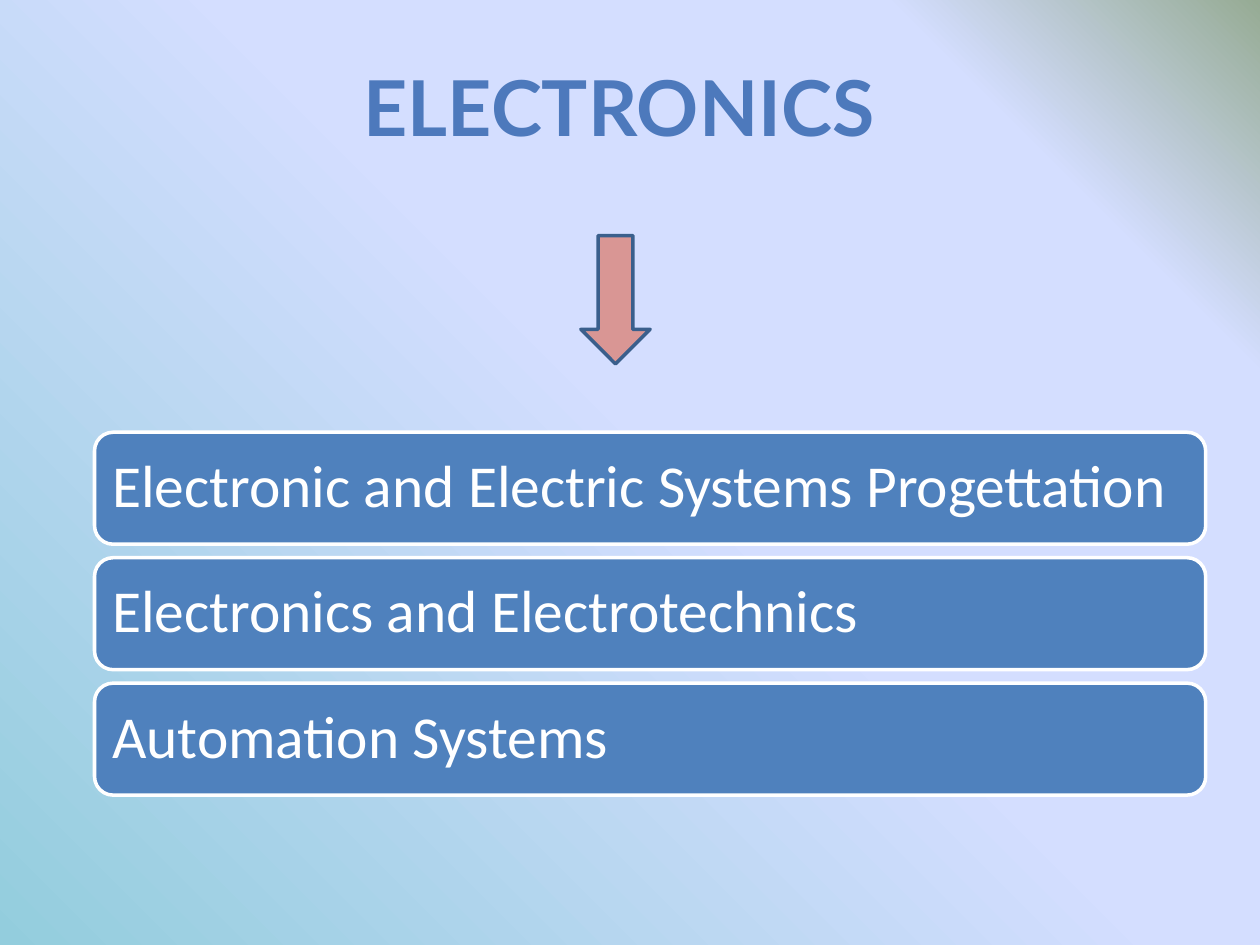
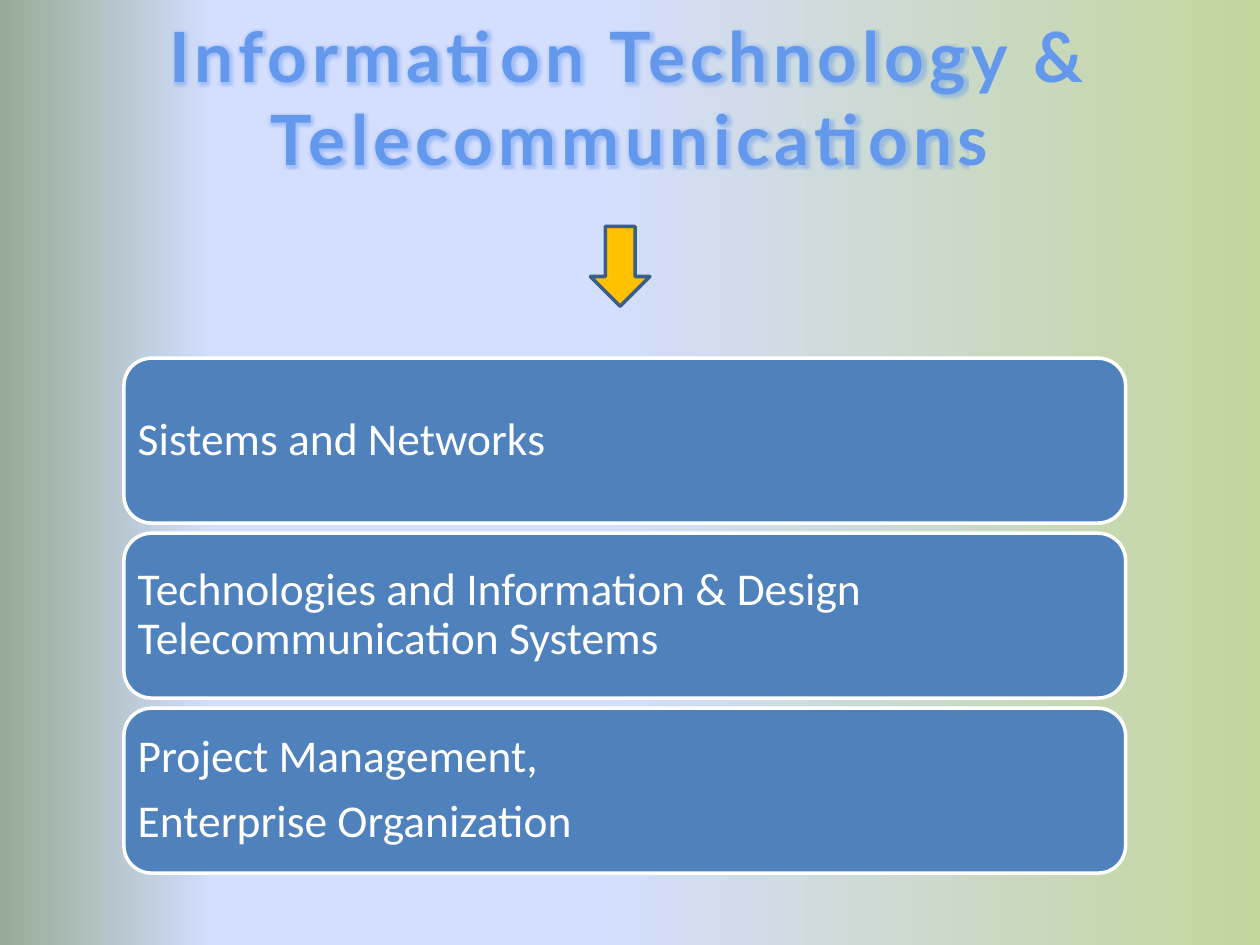
"""Build two school-course slides: a title, a down arrow and stacked subject blocks."""
import pptx
import pptx.dml.color
import pptx.enum.shapes
import pptx.enum.text
import pptx.oxml
import pptx.oxml.ns
import pptx.util

Pt = pptx.util.Pt
MSO_SHAPE = pptx.enum.shapes.MSO_SHAPE
MSO_ANCHOR = pptx.enum.text.MSO_ANCHOR
PP_ALIGN = pptx.enum.text.PP_ALIGN

COLORS = {
    "block": "4F81BD", "white": "FFFFFF", "arrow_line": "3A5F8C",
    "rose": "D99694", "amber": "FFC000",
    "title_blue": "4D79BC", "title_sky": "6398ED",
    "aqua": "93CDDD", "lime": "C3D69B", "lavender": "D4DEFF", "sage": "96AB94",
}
TITLE_FONT, BLOCK_FONT = "Lato", "Calibri"
TITLE_SIZE = (648, 90)
CORNER, CORNER_INSET = 0.16667, 0.29289

SLIDES = [
    {
        "first_stop": "aqua", "angle": 315,
        "title": {"text": "ELECTRONICS ", "at": (35.3, 15.1), "size": 44,
                  "color": "title_blue"},
        "arrow": {"box": (331.9, 134.6, 39.6, 73.4), "color": "rose"},
        "blocks": {"box": (54, 247, 635, 64), "step": 71.7, "size": 34, "pad": 10.1},
        "subjects": [
            "Electronic and Electric Systems Progettation",
            "Electronics and Electrotechnics",
            "Automation Systems",
        ],
    },
    {
        "first_stop": "lime", "angle": 180,
        "title": {"text": "Information Technology & Telecommunications",
                  "at": (36, 10.1), "size": 39.6, "color": "title_sky",
                  "spacing": 3, "glow": 4},
        "arrow": {"box": (337.4, 129.4, 34, 45.6), "color": "amber"},
        "blocks": {"box": (70.8, 204.7, 572.4, 94.2), "step": 100, "size": 26, "pad": 7.9},
        "subjects": [
            "Sistems and Networks",
            "Technologies and Information & Design Telecommunication Systems",
            "Project Management,\nEnterprise Organization",
        ],
    },
]


def rgb(name):
    return pptx.dml.color.RGBColor.from_string(COLORS[name])


def set_background(s, first_stop, angle):
    stops = [(0, first_stop), (53, "lavender"), (83, "lavender"), (100, "sage")]
    gs = "".join(f'<a:gs pos="{pos * 1000}"><a:srgbClr val="{COLORS[name]}"/></a:gs>'
                 for pos, name in stops)
    bg = pptx.oxml.parse_xml(
        f'<p:bg {pptx.oxml.ns.nsdecls("p", "a")}><p:bgPr><a:gradFill rotWithShape="1">'
        f'<a:gsLst>{gs}</a:gsLst><a:lin ang="{angle * 60000}" scaled="0"/></a:gradFill>'
        '<a:effectLst/></p:bgPr></p:bg>')
    s.element.find(pptx.oxml.ns.qn("p:cSld")).insert(0, bg)


def style_run(r, font, size, color, bold=False):
    r.font.name, r.font.size, r.font.bold = font, Pt(size), bold
    r.font.color.rgb = rgb(color)


def add_title(s, text, at, size, color, spacing=0, glow=0):
    tf = s.shapes.add_textbox(*map(Pt, at + TITLE_SIZE)).text_frame
    tf.word_wrap, tf.vertical_anchor = True, MSO_ANCHOR.MIDDLE
    p = tf.paragraphs[0]
    p.text, p.alignment = text, PP_ALIGN.CENTER
    r = p.runs[0]
    style_run(r, TITLE_FONT, size, color, bold=True)
    rpr = r.font.fill._xPr
    if spacing:
        rpr.set("spc", str(spacing * 100))
    if glow:
        rpr.insert(1, pptx.oxml.parse_xml(
            f'<a:effectLst {pptx.oxml.ns.nsdecls("a")}><a:glow rad="{Pt(glow)}">'
            f'<a:srgbClr val="{COLORS[color]}"><a:alpha val="45000"/></a:srgbClr>'
            '</a:glow></a:effectLst>'))


def add_shape(s, kind, box, fill, line):
    sp = s.shapes.add_shape(kind, *map(Pt, box))
    sp.shadow.inherit = False
    sp.fill.solid()
    sp.fill.fore_color.rgb = rgb(fill)
    sp.line.color.rgb = rgb(line)
    sp.line.width = Pt(2)
    return sp


def add_blocks(s, subjects, box, step, size, pad):
    left, top, width, height = box
    margin = Pt(pad - height * CORNER * CORNER_INSET)
    for i, subject in enumerate(subjects):
        sp = add_shape(s, MSO_SHAPE.ROUNDED_RECTANGLE,
                       (left, top + i * step, width, height), "block", "white")
        tf = sp.text_frame
        tf.text = subject
        tf.word_wrap, tf.vertical_anchor = True, MSO_ANCHOR.MIDDLE
        tf.margin_left = tf.margin_right = tf.margin_top = tf.margin_bottom = margin
        for p in tf.paragraphs:
            p.alignment, p.line_spacing = PP_ALIGN.LEFT, 0.9
            p.space_after = Pt(0.35 * size)
            style_run(p.runs[0], BLOCK_FONT, size, "white")


def main():
    prs = pptx.Presentation()
    prs.slide_width, prs.slide_height = Pt(720), Pt(540)
    for content in SLIDES:
        s = prs.slides.add_slide(prs.slide_layouts[6])
        set_background(s, content["first_stop"], content["angle"])
        add_title(s, **content["title"])
        add_blocks(s, content["subjects"], **content["blocks"])
        arrow = content["arrow"]
        add_shape(s, MSO_SHAPE.DOWN_ARROW, arrow["box"], arrow["color"], "arrow_line")
    prs.save("out.pptx")


if __name__ == "__main__":
    main()
